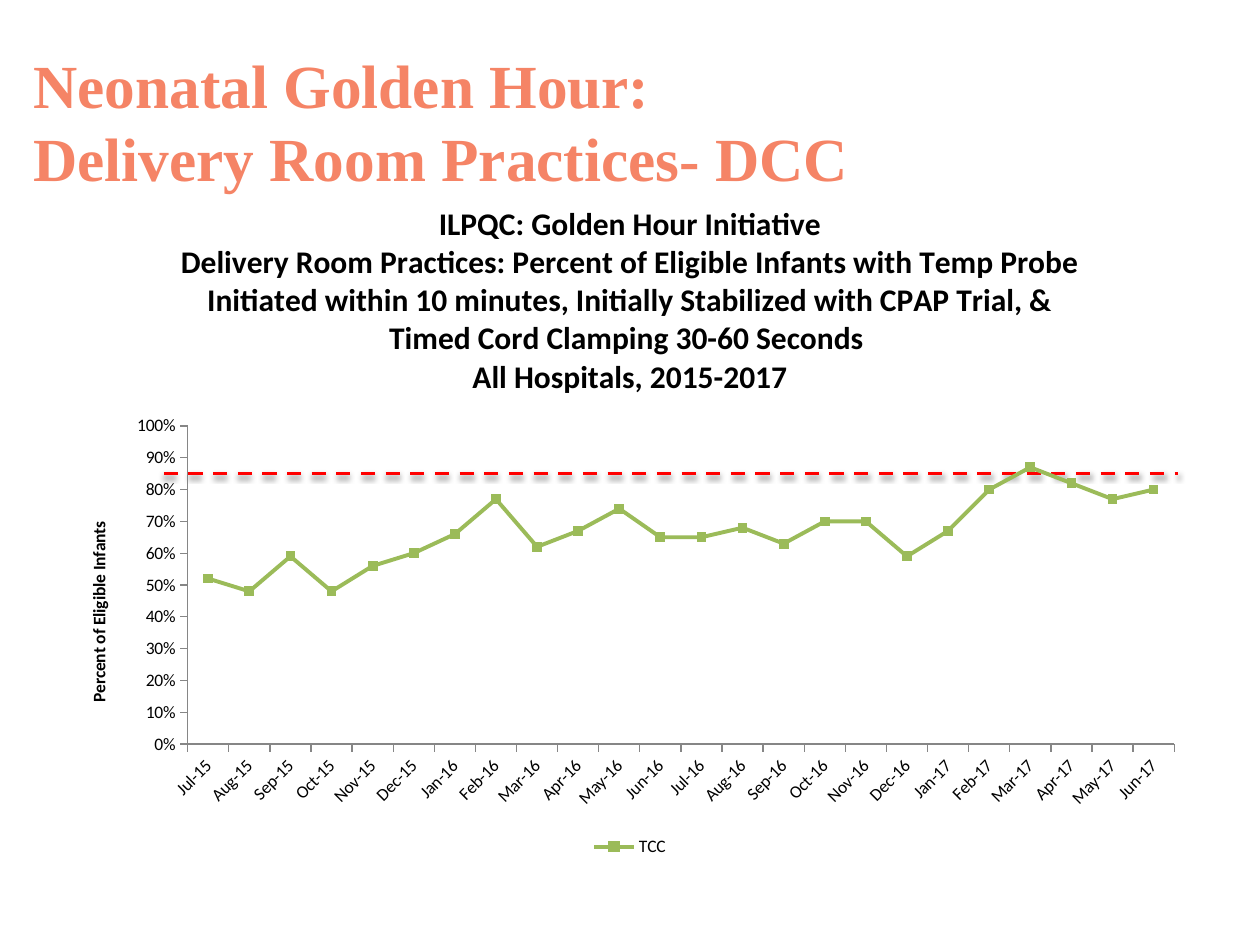
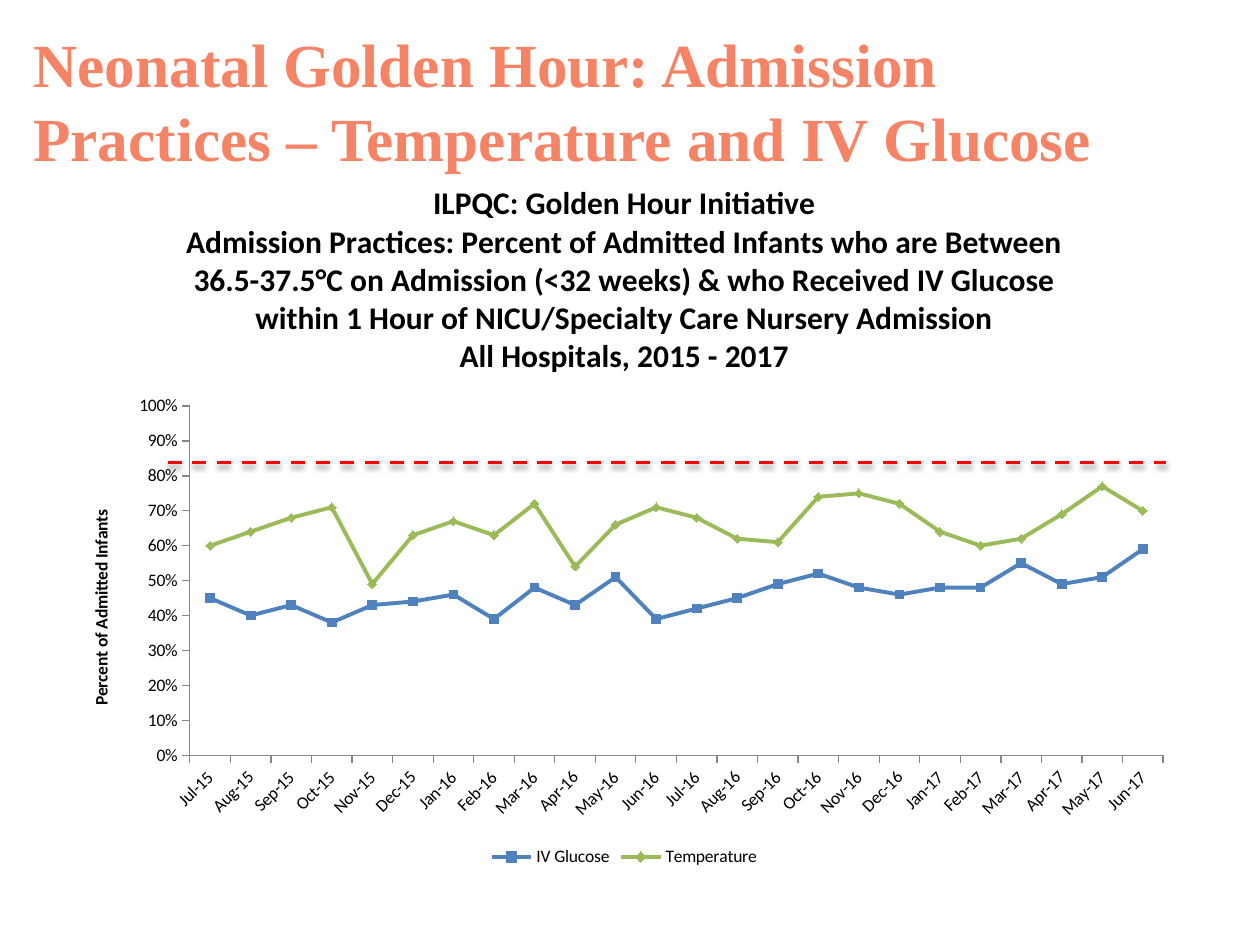
from lxml import etree
from pptx import Presentation
from pptx.chart.data import CategoryChartData
from pptx.dml.color import RGBColor
from pptx.enum.chart import XL_CHART_TYPE, XL_LEGEND_POSITION, XL_MARKER_STYLE, XL_TICK_MARK
from pptx.enum.dml import MSO_LINE
from pptx.enum.shapes import MSO_CONNECTOR
from pptx.enum.text import MSO_ANCHOR
from pptx.oxml import parse_xml
from pptx.oxml.ns import qn
from pptx.util import Pt

LINE_MARKERS = XL_CHART_TYPE.LINE_MARKERS
BOTTOM = XL_LEGEND_POSITION.BOTTOM
SQUARE, DIAMOND = XL_MARKER_STYLE.SQUARE, XL_MARKER_STYLE.DIAMOND
OUTSIDE, NO_TICK = XL_TICK_MARK.OUTSIDE, XL_TICK_MARK.NONE
DASH = MSO_LINE.DASH
STRAIGHT = MSO_CONNECTOR.STRAIGHT
MIDDLE = MSO_ANCHOR.MIDDLE

NAMESPACES = ('xmlns:a="http://schemas.openxmlformats.org/drawingml/2006/main" '
              'xmlns:c="http://schemas.openxmlformats.org/drawingml/2006/chart"')
NO_FILL = f"<c:spPr {NAMESPACES}><a:noFill/><a:ln><a:noFill/></a:ln></c:spPr>"
SHADOW = (f'<a:effectLst {NAMESPACES}><a:outerShdw blurRad="{Pt(3.1)}" dist="{Pt(1.6)}" '
          'dir="5400000" rotWithShape="0"><a:srgbClr val="000000"><a:alpha val="38000"/>'
          '</a:srgbClr></a:outerShdw></a:effectLst>')

# July 2015 to June 2017
MONTH_NAMES = "Jan Feb Mar Apr May Jun Jul Aug Sep Oct Nov Dec".split()
MONTHS = [f"{MONTH_NAMES[index % 12]}-{15 + index // 12}" for index in range(6, 30)]


def color(hex_string):
    return RGBColor.from_string(hex_string)


def format_font(font, size=10, name="Calibri", fill="000000", bold=False):
    font.size, font.name, font.bold = Pt(size), name, bold
    font.color.rgb = color(fill)


def write_text(frame, text, line_spacing=None, **font_format):
    """Write one paragraph for each line of the text."""
    for index, line in enumerate(text.split("\n")):
        paragraph = frame.paragraphs[0] if index == 0 else frame.add_paragraph()
        run = paragraph.add_run()
        run.text = line
        if line_spacing:
            paragraph.line_spacing = Pt(line_spacing)
        format_font(run.font, **font_format)


class Deck:
    TITLE = "F58466"
    GOAL = "FF0000"
    AXIS = "868686"
    BLUE = "4F81BD"
    GREEN = "9BBB59"

    def __init__(self):
        self.presentation = Presentation()
        self.presentation.slide_width, self.presentation.slide_height = Pt(720), Pt(540)
        self.slide = None

    def add_slide(self, title, title_height):
        self.slide = self.presentation.slides.add_slide(self.presentation.slide_layouts[6])
        box = self.slide.shapes.add_textbox(Pt(12), Pt(12), Pt(648), Pt(title_height))
        box.text_frame.word_wrap = True
        box.text_frame.vertical_anchor = MIDDLE
        write_text(box.text_frame, title, line_spacing=42, size=35,
                   name="Times New Roman", fill=self.TITLE, bold=True)

    def add_goal_line(self, left, right, top):
        line = self.slide.shapes.add_connector(STRAIGHT, Pt(left), Pt(top), Pt(right), Pt(top))
        line.line.color.rgb = color(self.GOAL)
        line.line.width = Pt(2)
        line.line.dash_style = DASH
        line._element.spPr.append(parse_xml(SHADOW))

    def add_line_chart(self, bounds, plot_bounds, title, value_title, series_list):
        """Each series is (name, percentages, color, marker style)."""
        data = CategoryChartData(number_format="0%")
        data.categories = MONTHS
        for name, percentages, _, _ in series_list:
            data.add_series(name, [percent / 100 for percent in percentages])
        frame = self.slide.shapes.add_chart(LINE_MARKERS, *map(Pt, bounds), data)
        chart = frame.chart
        format_font(chart.font)
        write_text(chart.chart_title.text_frame, title, size=18, bold=True)
        chart.chart_title.include_in_layout = False

        # Legend
        chart.has_legend = True
        chart.legend.position = BOTTOM
        chart.legend.include_in_layout = False
        format_font(chart.legend.font)

        # Series
        for series, (_, _, fill, marker) in zip(chart.plots[0].series, series_list):
            series.smooth = False
            series.format.line.color.rgb = color(fill)
            series.format.line.width = Pt(2.25)
            series.marker.style, series.marker.size = marker, 5
            series.marker.format.fill.solid()
            series.marker.format.fill.fore_color.rgb = color(fill)
            series.marker.format.line.color.rgb = color(fill)
        chart.plots[0].vary_by_categories = False

        # Axes
        for axis in (chart.category_axis, chart.value_axis):
            axis.has_major_gridlines = False
            axis.major_tick_mark, axis.minor_tick_mark = OUTSIDE, NO_TICK
            axis.format.line.color.rgb = color(self.AXIS)
            format_font(axis.tick_labels.font)
        label_body = chart.category_axis._element.find(qn("c:txPr")).find(qn("a:bodyPr"))
        label_body.set("rot", "-2700000")
        value_axis = chart.value_axis
        value_axis.minimum_scale, value_axis.maximum_scale = 0, 1
        value_axis.major_unit = 0.1
        value_axis.tick_labels.number_format = "0%"
        value_axis.tick_labels.number_format_is_linked = False
        write_text(value_axis.axis_title.text_frame, value_title, bold=True)

        self.place_plot(chart, plot_bounds)

    def place_plot(self, chart, plot_bounds):
        """Fix the inner plot area, as fractions of the chart, and clear the fills."""
        chart_element = chart._chartSpace.find(qn("c:chart"))
        plot_area = chart_element.find(qn("c:plotArea"))
        for layout in plot_area.findall(qn("c:layout")):
            plot_area.remove(layout)
        layout = parse_xml(f"<c:layout {NAMESPACES}><c:manualLayout/></c:layout>")
        settings = [("layoutTarget", "inner"), ("xMode", "edge"), ("yMode", "edge")]
        for tag, value in settings + list(zip("xywh", plot_bounds)):
            etree.SubElement(layout[0], qn(f"c:{tag}")).set("val", str(value))
        plot_area.insert(0, layout)
        plot_area.append(parse_xml(NO_FILL))
        chart_element.addnext(parse_xml(NO_FILL))


def main():
    deck = Deck()

    # Delivery room practices
    deck.add_slide("Neonatal Golden Hour:\nDelivery Room Practices- DCC", 114)
    deck.add_goal_line(93.6, 673.2, 270.7)
    deck.add_line_chart(
        (36, 102.2, 648, 390.2), (0.11, 0.362, 0.87, 0.466),
        "ILPQC: Golden Hour Initiative\n"
        "Delivery Room Practices: Percent of Eligible Infants with Temp Probe Initiated within "
        "10 minutes, Initially Stabilized with CPAP Trial, & Timed Cord Clamping 30-60 Seconds \n"
        "All Hospitals, 2015-2017",
        "Percent of Eligible Infants",
        [("TCC", [52, 48, 59, 48, 56, 60, 66, 77, 62, 67, 74, 65,
                  65, 68, 63, 70, 70, 59, 67, 80, 87, 82, 77, 80], deck.GREEN, SQUARE)])

    # Admission practices
    deck.add_slide("Neonatal Golden Hour: Admission Practices – Temperature and IV Glucose", 90)
    deck.add_goal_line(95.8, 666, 264.2)
    deck.add_line_chart(
        (36, 90, 641.5, 408.2), (0.113, 0.348, 0.867, 0.489),
        "ILPQC: Golden Hour Initiative\n"
        "Admission Practices: Percent of Admitted Infants who are Between 36.5-37.5°C on "
        "Admission (<32 weeks) & who Received IV Glucose within 1 Hour of NICU/Specialty Care "
        "Nursery Admission\n"
        "All Hospitals, 2015 - 2017",
        "Percent of Admitted Infants",
        [("IV Glucose", [45, 40, 43, 38, 43, 44, 46, 39, 48, 43, 51, 39,
                         42, 45, 49, 52, 48, 46, 48, 48, 55, 49, 51, 59], deck.BLUE, SQUARE),
         ("Temperature", [60, 64, 68, 71, 49, 63, 67, 63, 72, 54, 66, 71,
                          68, 62, 61, 74, 75, 72, 64, 60, 62, 69, 77, 70], deck.GREEN, DIAMOND)])

    deck.presentation.save("out.pptx")


if __name__ == "__main__":
    main()
